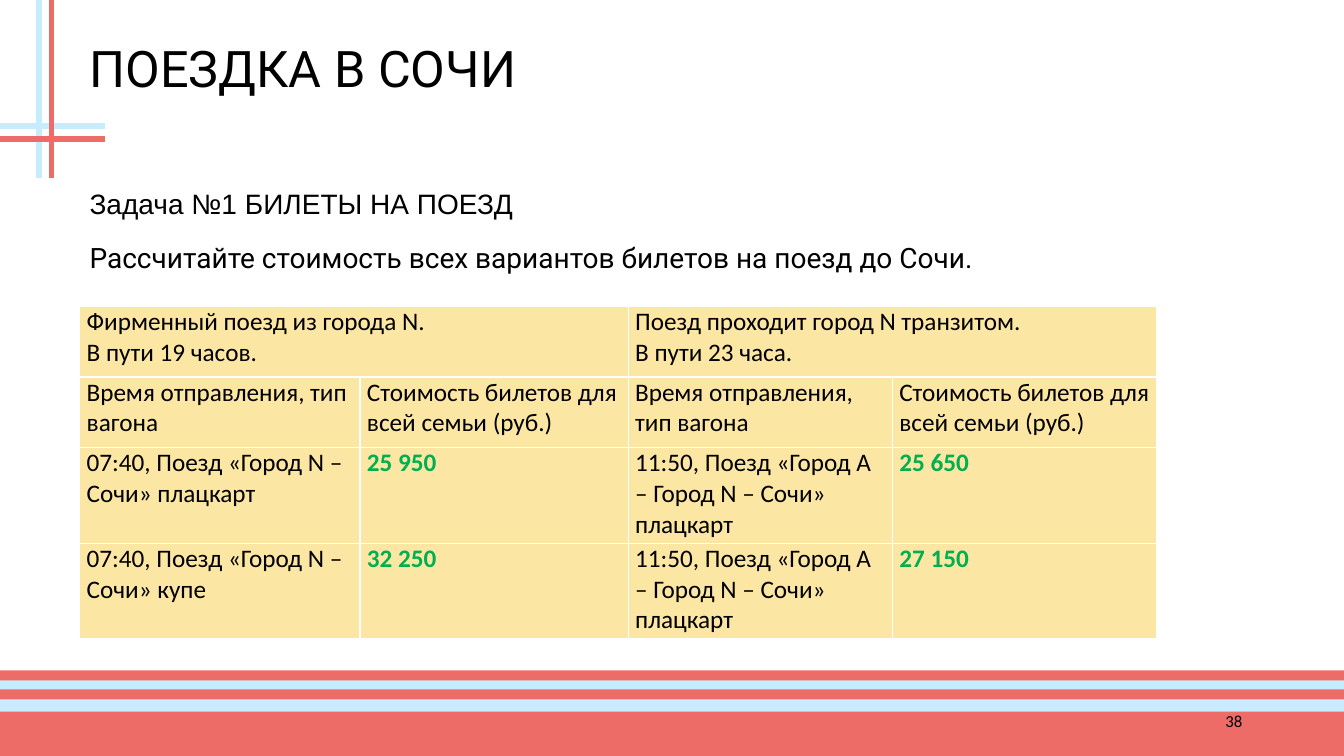
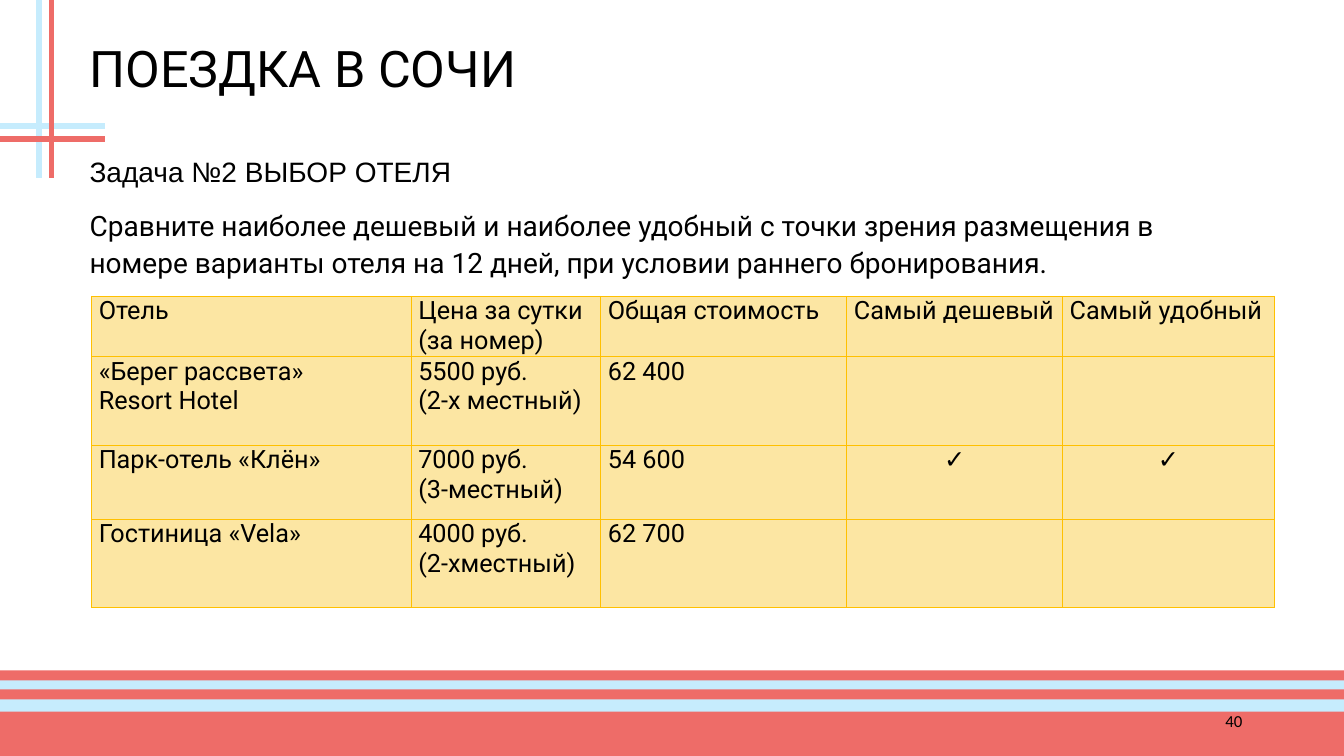
from lxml import etree
from pptx import Presentation
from pptx import util as u
from pptx.dml.color import RGBColor
from pptx.enum import shapes, text
from pptx.oxml import ns

# Theme
THEME = {
    "coral": "EE6C68", "sky": "C6ECFD", "cell": "FCE6A3", "ink": "000000",
    "answer": "00B050", "white": "FFFFFF", "gold": "FFC000",
    "head": "Roboto", "label": "Arial", "plain": "Calibri",
    "title": 36, "body": 20, "table": 18, "number": 12,
}
WIDTH, HEIGHT = 13.33, 7.5
LEFT, TEXT_WIDTH = 0.79, 11.63

# Shared decoration: bands (top, bottom, colour), lines (from x, y, to x, y, colour)
BANDS = [
    (6.66, HEIGHT, "sky"), (7.06, HEIGHT, "coral"),
    (6.84, 6.94, "coral"), (6.65, 6.75, "coral"),
]
CROSS_LINES = [
    (0, 1.25, 1.04, 1.25, "sky"), (0.39, 0, 0.39, 1.77, "sky"),
    (0, 1.38, 1.04, 1.38, "coral"), (0.51, 0, 0.51, 1.77, "coral"),
]

# Content: None continues the merged cell on its left
TITLE = "ПОЕЗДКА В СОЧИ"
DEPARTURE = "Время отправления, тип вагона"
FAMILY_PRICE = "Стоимость билетов для всей семьи (руб.)"
TRANSIT = "11:50, Поезд «Город A – Город N – Сочи» плацкарт"
CHECK = "✓"
SLIDES = [
    {
        "number": "38", "body_top": 1.77,
        "task": "Задача №1 БИЛЕТЫ НА ПОЕЗД",
        "question": "Рассчитайте стоимость всех вариантов билетов на поезд до Сочи.",
        "table": {
            "at": (0.79, 3.04), "font": "plain", "border": "white",
            "columns": [2.78, 2.66, 2.62, 2.62], "rows": [0.7, 0.7, 0.95, 0.95],
            "answers": {(2, 1), (2, 3), (3, 1), (3, 3)},
            "cells": [
                ["Фирменный поезд из города N.\nВ пути 19 часов.", None,
                 "Поезд проходит город N транзитом.\nВ пути 23 часа.", None],
                [DEPARTURE, FAMILY_PRICE, DEPARTURE, FAMILY_PRICE],
                ["07:40, Поезд «Город N – Сочи» плацкарт", "25 950", TRANSIT, "25 650"],
                ["07:40, Поезд «Город N – Сочи» купе", "32 250", TRANSIT, "27 150"],
            ],
        },
    },
    {
        "number": "40", "body_top": 1.45,
        "task": "Задача №2 ВЫБОР ОТЕЛЯ",
        "question": "Сравните наиболее дешевый и наиболее удобный c точки зрения размещения "
                    "в номере варианты отеля на 12 дней, при условии раннего бронирования.",
        "table": {
            "at": (0.91, 2.94), "font": "head", "border": "gold",
            "columns": [3.17, 1.88, 2.44, 2.14, 2.1], "rows": [0.59, 0.88, 0.73, 0.88],
            "answers": set(),
            "cells": [
                ["Отель", "Цена за сутки\n(за номер)", "Общая стоимость",
                 "Самый дешевый", "Самый удобный"],
                ["«Берег рассвета»\nResort Hotel", "5500 руб.\n(2-х местный)", "62 400", "", ""],
                ["Парк-отель «Клён»", "7000 руб.\n(3-местный)", "54 600", CHECK, CHECK],
                ["Гостиница «Vela»", "4000 руб.\n(2-хместный)", "62 700", "", ""],
            ],
        },
    },
]


def colour(name):
    return RGBColor.from_string(THEME[name])


def style(paragraph, font, size, ink="ink", bold=False):
    paragraph.font.name = THEME[font]
    paragraph.font.size = u.Pt(THEME[size])
    paragraph.font.color.rgb = colour(ink)
    paragraph.font.bold = bold


def add_text(slide, box, lines, size, spacing=1.0, after=0):
    """Add a text box of (text, font) lines and return its frame."""
    frame = slide.shapes.add_textbox(*map(u.Inches, box)).text_frame
    frame.word_wrap = True
    frame.text = "\n".join(line for line, _ in lines)
    for paragraph, (_, font) in zip(frame.paragraphs, lines):
        style(paragraph, font, size)
        paragraph.line_spacing = spacing
        paragraph.space_after = u.Pt(after)
    return frame


def add_decoration(slide, number):
    for top, bottom, fill in BANDS:
        box = (0, top, WIDTH, bottom - top)
        band = slide.shapes.add_shape(shapes.MSO_SHAPE.RECTANGLE, *map(u.Inches, box))
        band.shadow.inherit = False
        band.fill.solid()
        band.fill.fore_color.rgb = colour(fill)
        band.line.fill.background()
    for *ends, ink in CROSS_LINES:
        line = slide.shapes.add_connector(shapes.MSO_CONNECTOR.STRAIGHT, *map(u.Inches, ends))
        line.line.color.rgb = colour(ink)
        line.line.width = u.Pt(4)
        etree.SubElement(line._element.spPr, ns.qn("a:effectLst"))
    frame = add_text(slide, (9.42, 6.95, 3, 0.4), [(number, "plain")], "number")
    frame.vertical_anchor = text.MSO_ANCHOR.MIDDLE
    frame.paragraphs[0].alignment = text.PP_ALIGN.RIGHT


def add_borders(cell, ink):
    properties = cell._tc.get_or_add_tcPr()
    for index, side in enumerate(("lnL", "lnR", "lnT", "lnB")):
        line = etree.Element(ns.qn(f"a:{side}"), w=str(u.Pt(1)))
        fill = etree.SubElement(line, ns.qn("a:solidFill"))
        etree.SubElement(fill, ns.qn("a:srgbClr"), val=THEME[ink])
        properties.insert(index, line)


def add_table(slide, data):
    columns, rows, cells = data["columns"], data["rows"], data["cells"]
    box = (*data["at"], sum(columns), sum(rows))
    table = slide.shapes.add_table(len(rows), len(columns), *map(u.Inches, box)).table
    table.first_row = table.horz_banding = False
    for column, width in zip(table.columns, columns):
        column.width = u.Inches(width)
    for row, height in zip(table.rows, rows):
        row.height = u.Inches(height)
    for r, line in enumerate(cells):
        for c, content in enumerate(line):
            cell = table.cell(r, c)
            cell.fill.solid()
            cell.fill.fore_color.rgb = colour("cell")
            add_borders(cell, data["border"])
            cell.margin_left = cell.margin_right = u.Inches(0.07)
            cell.margin_top = cell.margin_bottom = 0
            if content is None:
                table.cell(r, c - 1).merge(cell)
                continue
            cell.text = content
            answer = (r, c) in data["answers"]
            for paragraph in cell.text_frame.paragraphs:
                style(paragraph, data["font"], "table", "answer" if answer else "ink", answer)
                if content == CHECK:
                    paragraph.alignment = text.PP_ALIGN.CENTER


def main():
    presentation = Presentation()
    presentation.slide_width, presentation.slide_height = u.Inches(WIDTH), u.Inches(HEIGHT)
    for content in SLIDES:
        slide = presentation.slides.add_slide(presentation.slide_layouts[6])
        add_decoration(slide, content["number"])
        add_text(slide, (LEFT, 0.39, TEXT_WIDTH, 0.73), [(TITLE, "head")], "title", 0.9)
        top = content["body_top"]
        lines = [(content["task"], "label"), (content["question"], "head")]
        add_text(slide, (LEFT, top, TEXT_WIDTH, content["table"]["at"][1] - top),
                 lines, "body", 1.1, 12)
        add_table(slide, content["table"])
    presentation.save("out.pptx")


if __name__ == "__main__":
    main()
